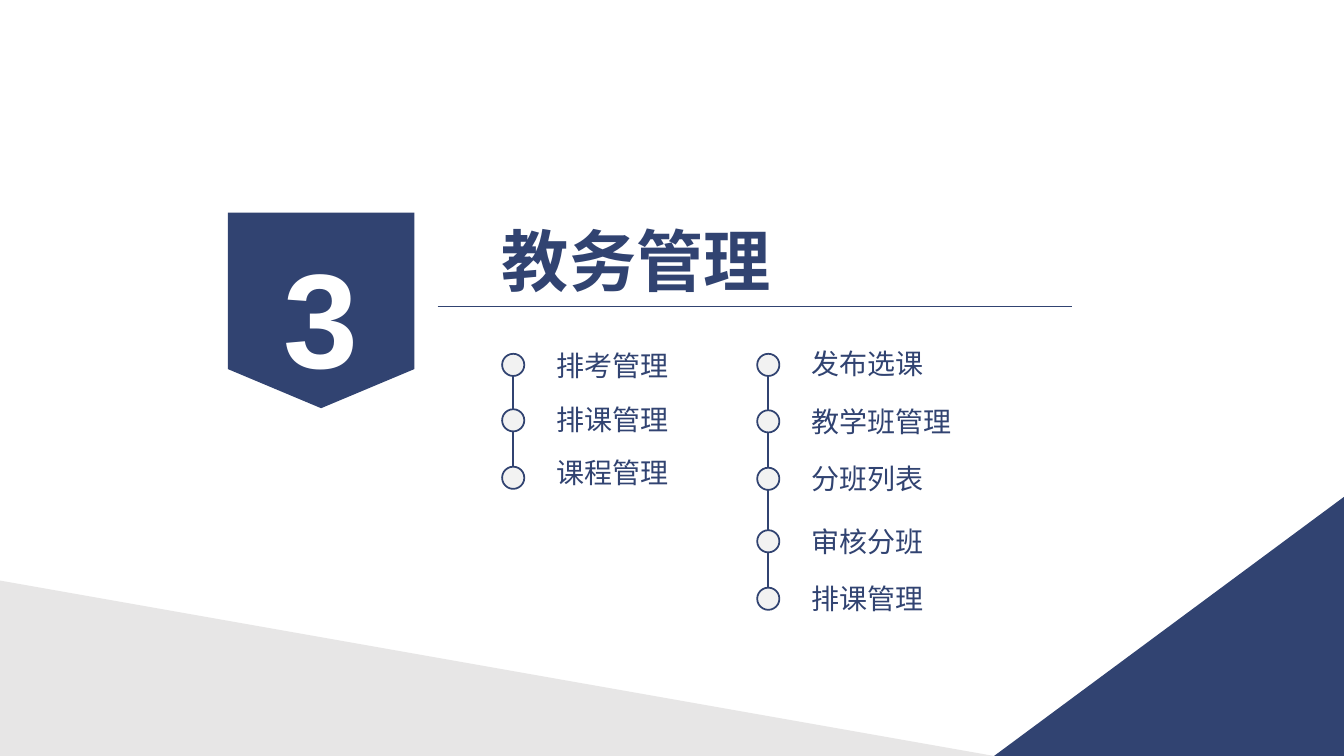
import pptx
import pptx.dml.color
import pptx.enum.shapes
import pptx.enum.text
import pptx.oxml
import pptx.oxml.ns
import pptx.util
from pptx.util import Inches

NAVY = "314371"
PALE = "F2F2F2"
GREY = "E7E6E6"
WHITE = "FFFFFF"
LATIN = "Arial"
CHINESE = "Noto Sans CJK SC"
DOT_SIZE = 0.22
LABEL_HEIGHT = 0.47

SHAPES = pptx.enum.shapes.MSO_SHAPE
ALIGN = pptx.enum.text.PP_ALIGN
ANCHOR = pptx.enum.text.MSO_ANCHOR
AUTO_SIZE = pptx.enum.text.MSO_AUTO_SIZE


def color(hex_value):
    return pptx.dml.color.RGBColor.from_string(hex_value)


def paint(shape, fill, line=None, width=1.25):
    shape.shadow.inherit = False
    shape.fill.solid()
    shape.fill.fore_color.rgb = color(fill)
    if line:
        shape.line.color.rgb = color(line)
        shape.line.width = pptx.util.Pt(width)
    else:
        shape.line.fill.background()


def write(frame, text, size, font, hex_value, bold=False):
    frame.text = text
    run = frame.paragraphs[0].runs[0]
    run.font.size = pptx.util.Pt(size)
    run.font.name = font
    run.font.bold = bold
    run.font.color.rgb = color(hex_value)
    east_asian = pptx.oxml.parse_xml(
        f'<a:ea {pptx.oxml.ns.nsdecls("a")} typeface="{font}"/>')
    run.font._element.find(pptx.oxml.ns.qn("a:latin")).addnext(east_asian)


def add_line(slide, x1, y1, x2, y2, width):
    line = slide.shapes.add_connector(
        pptx.enum.shapes.MSO_CONNECTOR.STRAIGHT,
        Inches(x1), Inches(y1), Inches(x2), Inches(y2))
    line.line.color.rgb = color(NAVY)
    line.line.width = pptx.util.Pt(width)
    line._element.spPr.append(
        pptx.oxml.parse_xml(f'<a:effectLst {pptx.oxml.ns.nsdecls("a")}/>'))


def add_triangle(slide, corners, fill):
    start, *rest = [(Inches(x), Inches(y)) for x, y in corners]
    builder = slide.shapes.build_freeform(*start)
    builder.add_line_segments(rest, close=True)
    paint(builder.convert_to_shape(), fill)


def add_badge(slide, number):
    badge = slide.shapes.add_shape(
        SHAPES.FLOWCHART_OFFPAGE_CONNECTOR,
        Inches(2.26), Inches(2.11), Inches(1.85), Inches(1.94))
    paint(badge, NAVY)
    frame = badge.text_frame
    write(frame, number, 96, LATIN, WHITE, bold=True)
    frame.vertical_anchor = ANCHOR.MIDDLE
    frame.paragraphs[0].alignment = ALIGN.CENTER
    frame.paragraphs[0].line_spacing = 1.3


def add_title(slide, text):
    title = slide.shapes.add_textbox(
        Inches(4.88), Inches(2.13), Inches(2.87), Inches(0.91))
    write(title.text_frame, text, 48, CHINESE, NAVY, bold=True)
    title.text_frame.word_wrap = False
    title.text_frame.auto_size = AUTO_SIZE.SHAPE_TO_FIT_TEXT


def add_dot(slide, left, top):
    dot = slide.shapes.add_shape(
        SHAPES.OVAL, Inches(left), Inches(top),
        Inches(DOT_SIZE), Inches(DOT_SIZE))
    paint(dot, PALE, NAVY)


def add_label(slide, text, left, top, width):
    label = slide.shapes.add_textbox(
        Inches(left), Inches(top), Inches(width), Inches(LABEL_HEIGHT))
    frame = label.text_frame
    write(frame, text, 20, CHINESE, NAVY)
    frame.word_wrap = True
    frame.auto_size = AUTO_SIZE.SHAPE_TO_FIT_TEXT
    frame.margin_left = frame.margin_right = Inches(0.13)
    frame.margin_top = frame.margin_bottom = Inches(0.07)


def add_topics(slide, left, label_width, topics):
    center = left + DOT_SIZE / 2
    first_dot, last_dot = topics[0][1], topics[-1][1]
    add_line(slide, center, first_dot + DOT_SIZE / 2,
             center, last_dot + DOT_SIZE / 2, 1.25)
    for text, dot_top, label_top in topics:
        add_dot(slide, left, dot_top)
        add_label(slide, text, left + 0.41, label_top, label_width)


def main():
    deck = pptx.Presentation()
    deck.slide_width = Inches(13.33)
    deck.slide_height = Inches(7.5)
    slide = deck.slides.add_slide(deck.slide_layouts[6])

    add_triangle(slide, [(0, 7.5), (0, 5.76), (9.86, 7.5)], GREY)
    add_triangle(slide, [(13.33, 7.5), (13.33, 4.93), (9.86, 7.5)], NAVY)
    add_badge(slide, "3")
    add_line(slide, 4.34, 3.04, 10.63, 3.04, 1)
    add_title(slide, "教务管理")
    add_topics(slide, 4.98, 1.5, [
        ("排考管理", 3.51, 3.39),
        ("排课管理", 4.06, 3.92),
        ("课程管理", 4.63, 4.45),
    ])
    add_topics(slide, 7.51, 3.5, [
        ("发布选课", 3.51, 3.37),
        ("教学班管理", 4.07, 3.94),
        ("分班列表", 4.64, 4.51),
        ("审核分班", 5.26, 5.13),
        ("排课管理", 5.83, 5.7),
    ])
    deck.save("out.pptx")


if __name__ == "__main__":
    main()
